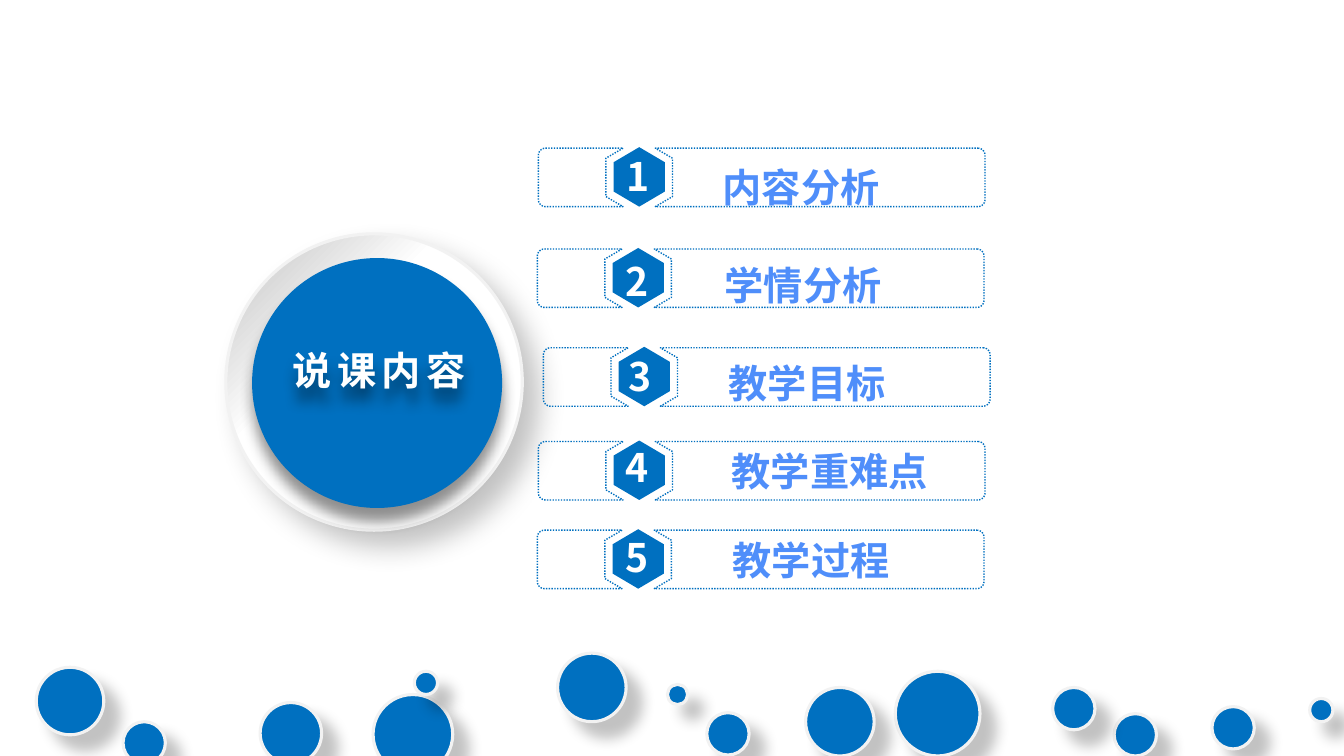
import copy
import dataclasses
import math
import typing

import lxml.etree
import pptx
import pptx.dml.color
import pptx.enum.dml
import pptx.enum.shapes
import pptx.enum.text
import pptx.oxml.ns
import pptx.util

PX = 9144  # EMU per px, 100 px to the inch
BLUE = pptx.dml.color.RGBColor(0x00, 0x70, 0xC0)
TOPIC_BLUE = pptx.dml.color.RGBColor(0x4F, 0x8E, 0xFA)
WHITE = pptx.dml.color.RGBColor(0xFF, 0xFF, 0xFF)
RIM_GREY = pptx.dml.color.RGBColor(0xF2, 0xF2, 0xF2)
RING_GREY = pptx.dml.color.RGBColor(0xBF, 0xBF, 0xBF)
FONT_FORMAT = {"name": "Noto Sans CJK SC", "size": pptx.util.Pt(28), "bold": True}
FRAME_WIDTH, FRAME_HEIGHT, CORNER, BADGE_X = 443, 58, 7, 100

Point = tuple[float, float]


class Box(typing.NamedTuple):
    left: int
    top: int
    width: int
    height: int = 57

    def emu(self) -> list[int]:
        return [length * PX for length in self]


class Dot(typing.NamedTuple):
    left: int
    top: int
    size: int


class Shadow(typing.NamedTuple):
    opacity: int
    blur: int
    distance: int
    angle: int


@dataclasses.dataclass(frozen=True)
class Section:
    topic: str
    left: int
    top: int
    number_box: Box
    topic_box: Box
    wraps: bool = False


DOT_SHADOW = Shadow(23, 10, 15, 45)
RING_SHADOW = Shadow(23, 20, 15, 45)
DISC_SHADOW = Shadow(43, 10, 10, 90)

DOTS = [
    Dot(258, 697, 61), Dot(553, 648, 68), Dot(888, 666, 84), Dot(701, 707, 42),
    Dot(36, 662, 67), Dot(370, 689, 79), Dot(799, 682, 68), Dot(411, 666, 23),
    Dot(122, 716, 42), Dot(1105, 708, 42), Dot(662, 679, 20), Dot(1299, 693, 23),
    Dot(1044, 682, 42), Dot(1202, 701, 42),
]
SECTIONS = [
    Section("内容分析", 534, 147, Box(612, 146, 61), Box(707, 157, 235), True),
    Section("学情分析", 533, 247, Box(611, 250, 77), Box(709, 254, 178)),
    Section("教学目标", 539, 345, Box(614, 345, 77), Box(713, 352, 178)),
    Section("教学重难点", 534, 438, Box(611, 435, 77), Box(716, 439, 217)),
    Section("教学过程", 533, 526, Box(611, 524, 77), Box(717, 527, 178)),
]


def set_format(target, values: dict) -> None:
    for attribute, value in values.items():
        setattr(target, attribute, value)


def add_shadow(shape, shadow: Shadow) -> None:
    shape.shadow.inherit = False
    qn = pptx.oxml.ns.qn
    effects = shape._element.spPr.find(qn("a:effectLst"))
    outer = lxml.etree.SubElement(
        effects, qn("a:outerShdw"), blurRad=str(pptx.util.Pt(shadow.blur)),
        dist=str(pptx.util.Pt(shadow.distance)), dir=str(shadow.angle * 60000),
        algn="ctr", rotWithShape="0")
    color = lxml.etree.SubElement(outer, qn("a:srgbClr"), val="000000")
    lxml.etree.SubElement(color, qn("a:alpha"), val=str(shadow.opacity * 1000))


def add_circle(shapes, dot: Dot, shadow: Shadow, rim: bool = True):
    circle = shapes.add_shape(pptx.enum.shapes.MSO_SHAPE.OVAL,
                              *Box(dot.left, dot.top, dot.size, dot.size).emu())
    circle.fill.solid()
    circle.fill.fore_color.rgb = BLUE
    if rim:
        circle.line.color.rgb = RIM_GREY
        circle.line.width = pptx.util.Pt(2.25)
    else:
        circle.line.fill.background()
    add_shadow(circle, shadow)
    return circle


def write(frame, text: str, color: pptx.dml.color.RGBColor, wraps: bool):
    set_format(frame, {
        "text": text, "word_wrap": wraps,
        "auto_size": pptx.enum.text.MSO_AUTO_SIZE.SHAPE_TO_FIT_TEXT,
        "vertical_anchor": pptx.enum.text.MSO_ANCHOR.TOP})
    frame.paragraphs[0].alignment = pptx.enum.text.PP_ALIGN.LEFT
    run = frame.paragraphs[0].runs[0]
    set_format(run.font, FONT_FORMAT)
    run.font.color.rgb = color
    properties = run._r.get_or_add_rPr()
    lxml.etree.SubElement(properties, pptx.oxml.ns.qn("a:ea"), typeface=FONT_FORMAT["name"])
    return properties


def add_label(shapes, box: Box, text: str, color: pptx.dml.color.RGBColor,
              wraps: bool) -> None:
    write(shapes.add_textbox(*box.emu()).text_frame, text, color, wraps)


def corner(center_x: int, center_y: int, start: int) -> list[Point]:
    """Quarter arc running clockwise from the start angle, in degrees."""
    angles = [math.radians(start + 90 * step / 8) for step in range(9)]
    return [(center_x + CORNER * math.cos(a), center_y + CORNER * math.sin(a))
            for a in angles]


def add_outline(shapes, left: int, top: int, contours: list[list[Point]]):
    placed = [[(round((left + x) * PX), round((top + y) * PX)) for x, y in contour]
              for contour in contours]
    builder = shapes.build_freeform(*placed[0][0], scale=1.0)
    for index, contour in enumerate(placed):
        if index:
            builder.move_to(*contour[0])
        builder.add_line_segments(contour[1:], close=True)
    outline = builder.convert_to_shape()
    outline.shadow.inherit = False
    return outline


def add_section(shapes, number: int, section: Section) -> None:
    group = shapes.add_group_shape().shapes
    low = FRAME_HEIGHT - CORNER
    far = FRAME_WIDTH - CORNER

    # Dotted frame, notched on both sides of the badge
    def notch(side: int) -> list[Point]:
        return [(BADGE_X + side * x, y) for x, y in
                [(16, 0), (33, 10), (33, 48), (16, FRAME_HEIGHT)]]

    frame = add_outline(group, section.left, section.top, [
        notch(-1) + corner(CORNER, low, 90) + corner(CORNER, CORNER, 180),
        corner(far, CORNER, 270) + corner(far, low, 0) + notch(1)[::-1]])
    frame.fill.background()
    frame.line.color.rgb = BLUE
    set_format(frame.line, {"width": pptx.util.Pt(1),
                            "dash_style": pptx.enum.dml.MSO_LINE.ROUND_DOT})

    # Numbered hexagon
    hexagon = [(0, -1), (25.5, 14), (25.5, 43), (0, 58), (-25.5, 43), (-25.5, 14)]
    badge = add_outline(group, section.left + BADGE_X, section.top, [hexagon])
    badge.fill.solid()
    badge.fill.fore_color.rgb = BLUE
    badge.line.fill.background()
    add_label(group, section.number_box, str(number), WHITE, True)


def main() -> None:
    deck = pptx.Presentation()
    set_format(deck, {"slide_width": 1333 * PX, "slide_height": 750 * PX})
    slide = deck.slides.add_slide(deck.slide_layouts[5])
    shapes = slide.shapes

    # Scattered dots
    for dot in DOTS:
        add_circle(shapes, dot, DOT_SHADOW)

    # Ring and disc behind the title
    ring = add_circle(shapes, Dot(224, 232, 294), RING_SHADOW)
    ring.fill.gradient()
    ring.fill.gradient_angle = 315
    stops = ring._element.spPr.find(".//" + pptx.oxml.ns.qn("a:gsLst"))
    stops.append(copy.deepcopy(stops[-1]))
    for stop, position, color in zip(ring.fill.gradient_stops, (0, 0.37, 1),
                                     (RING_GREY, WHITE, WHITE)):
        stop.position = position
        stop.color.rgb = color
    add_circle(shapes, Dot(250, 256, 248), DISC_SHADOW, rim=False)

    # Title, raised above the disc
    title = shapes.title
    set_format(title, dict(zip(("left", "top", "width", "height"),
                               Box(280, 339, 200).emu())))
    write(title.text_frame, "说课内容", WHITE, False).set("spc", "400")
    add_shadow(title, DISC_SHADOW)
    shapes._spTree.append(title._element)

    # Sections
    for number, section in enumerate(SECTIONS, start=1):
        add_section(shapes, number, section)
    for section in SECTIONS:
        add_label(shapes, section.topic_box, section.topic, TOPIC_BLUE, section.wraps)

    deck.save("out.pptx")


if __name__ == "__main__":
    main()
